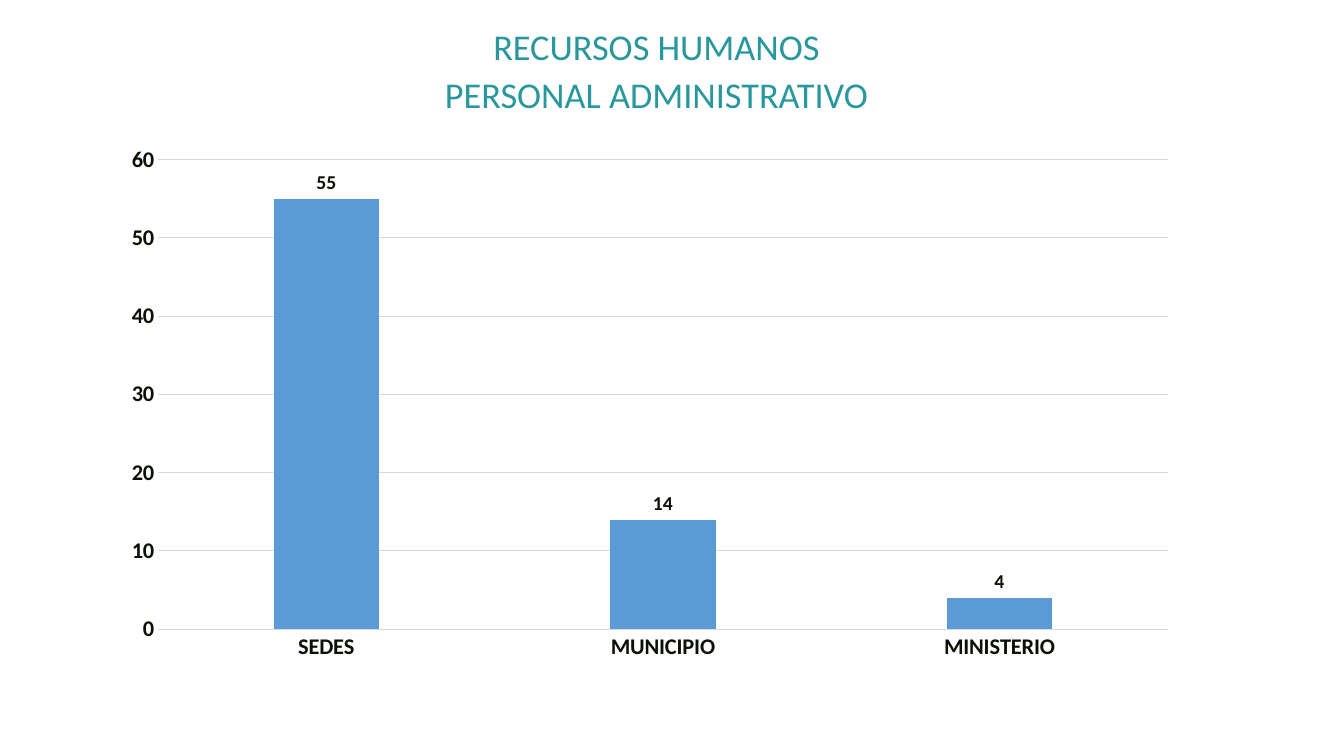
from pptx import Presentation
from pptx.chart.data import CategoryChartData
from pptx.dml.color import RGBColor
from pptx.enum.chart import XL_CHART_TYPE, XL_LABEL_POSITION, XL_TICK_MARK
from pptx.enum.text import PP_ALIGN
from pptx.util import Inches, Pt

COLUMNS = XL_CHART_TYPE.COLUMN_CLUSTERED
OUTSIDE_END = XL_LABEL_POSITION.OUTSIDE_END
NO_TICK = XL_TICK_MARK.NONE
CENTER = PP_ALIGN.CENTER

WIDTH, HEIGHT = Inches(13.33), Inches(7.5)
FONT = "Calibri"
COLORS = {"heading": "28989E", "label": "0B1107", "grid": "D9D9D9", "bar": "5B9BD5"}

HEADING = ["RECURSOS HUMANOS", "PERSONAL ADMINISTRATIVO"]
STAFF = {"SEDES": 55, "MUNICIPIO": 14, "MINISTERIO": 4}

HEADING_AREA = (0.072, 0.036, 0.833, 0.127)
CHART_AREA = (0.082, 0.179, 0.803, 0.709)


def color(name):
    return RGBColor.from_string(COLORS[name])


def place(area):
    return [round(share * side) for share, side in zip(area, (WIDTH, HEIGHT) * 2)]


def apply(target, values):
    for attribute, value in values.items():
        setattr(target, attribute, value)


def style_font(font, size, color_name, bold=False):
    apply(font, {"name": FONT, "size": Pt(size), "bold": bold})
    font.color.rgb = color(color_name)


def style_line(line):
    line.color.rgb = color("grid")
    line.width = Pt(0.75)


def style_axis(axis):
    apply(axis, {"major_tick_mark": NO_TICK, "minor_tick_mark": NO_TICK})
    style_font(axis.tick_labels.font, 16, "label", bold=True)


def add_heading(slide):
    frame = slide.shapes.add_textbox(*place(HEADING_AREA)).text_frame
    frame.word_wrap = True
    for index, wording in enumerate(HEADING):
        line = frame.add_paragraph() if index else frame.paragraphs[0]
        line.text = wording
        apply(line, {
            "alignment": CENTER,
            "line_spacing": 0.8,
            "space_before": Pt(10 if index else 0),
        })
        style_font(line.runs[0].font, 25.9, "heading")


def add_staff_chart(slide):
    data = CategoryChartData()
    data.categories = list(STAFF)
    data.add_series("Personal", list(STAFF.values()))
    chart = slide.shapes.add_chart(COLUMNS, *place(CHART_AREA), data).chart
    apply(chart, {"has_legend": False, "has_title": False})
    style_font(chart.font, 10, "label")

    institutions, headcount = chart.category_axis, chart.value_axis
    for axis in (institutions, headcount):
        style_axis(axis)
    style_line(institutions.format.line)
    apply(headcount, {
        "minimum_scale": 0,
        "maximum_scale": 60,
        "major_unit": 10,
        "has_major_gridlines": True,
    })
    style_line(headcount.major_gridlines.format.line)
    headcount.format.line.fill.background()

    plot = chart.plots[0]
    apply(plot, {
        "gap_width": 219,
        "overlap": -27,
        "vary_by_categories": False,
        "has_data_labels": True,
    })
    apply(plot.data_labels, {"show_value": True, "position": OUTSIDE_END})
    style_font(plot.data_labels.font, 14, "label", bold=True)
    bars = plot.series[0].format.fill
    bars.solid()
    bars.fore_color.rgb = color("bar")


def main():
    deck = Presentation()
    apply(deck, {"slide_width": WIDTH, "slide_height": HEIGHT})
    slide = deck.slides.add_slide(deck.slide_layouts[6])
    add_heading(slide)
    add_staff_chart(slide)
    deck.save("out.pptx")


if __name__ == "__main__":
    main()
